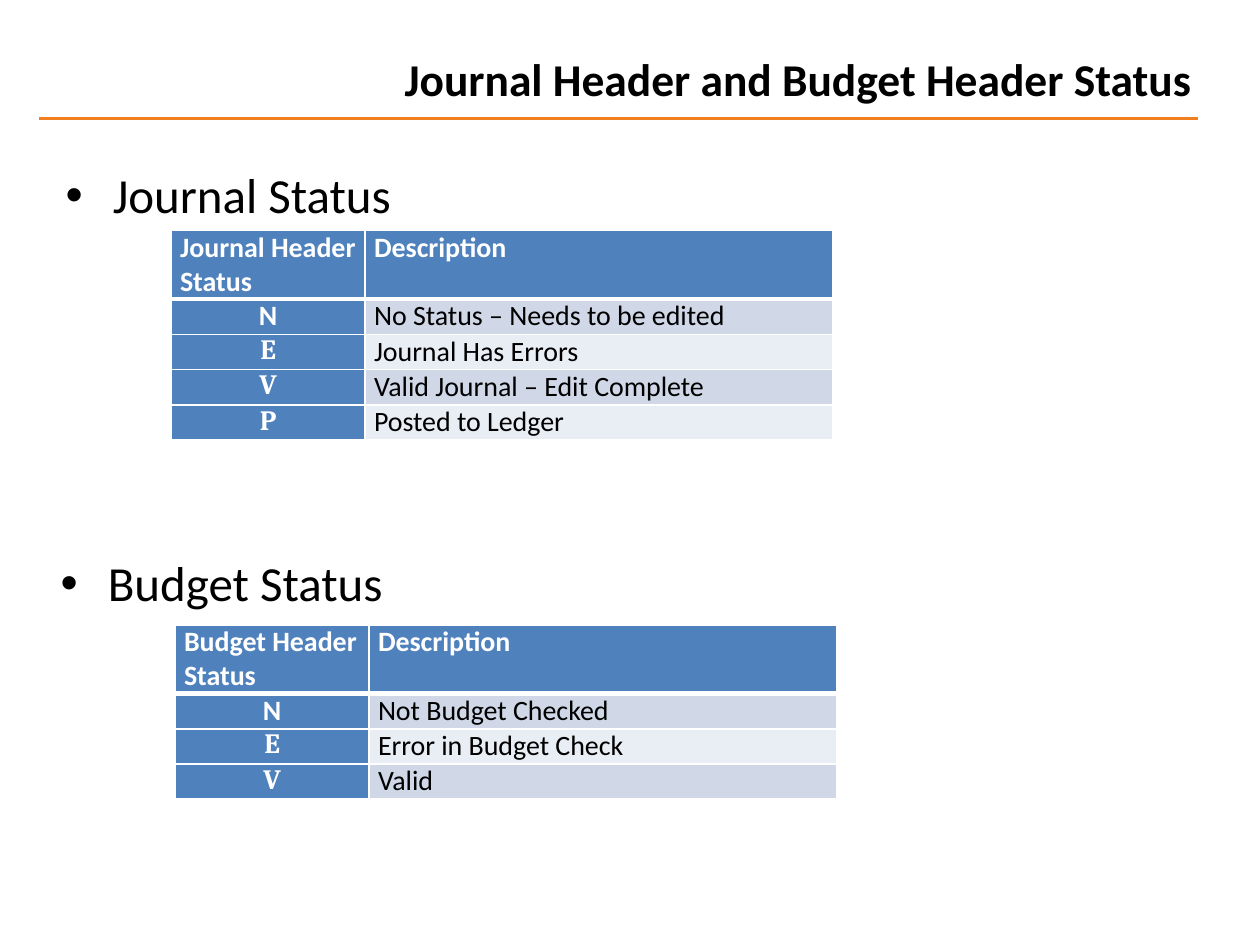
from lxml.etree import SubElement
from pptx import Presentation
from pptx.dml.color import RGBColor
from pptx.enum.shapes import MSO_CONNECTOR as Connector
from pptx.enum.text import MSO_ANCHOR as Anchor, MSO_AUTO_SIZE as AutoSize, PP_ALIGN as Align
from pptx.oxml.ns import qn
from pptx.util import Cm, Pt

BLACK, WHITE, ORANGE = "000000", "FFFFFF", "F17E1F"
BLUE, BANDS = "4F81BD", ("D0D8E8", "E9EDF4")


def color(value):
    return RGBColor.from_string(value)


def write(frame, text, size=16, font="Calibri", ink=BLACK, bold=False,
          align=Align.LEFT, bullet=False):
    """Put one formatted paragraph in a text frame."""
    para = frame.paragraphs[0]
    para.alignment = align
    para.space_before = Pt(0)
    if bullet:
        props = para._p.get_or_add_pPr()
        props.set("marL", str(Cm(0.95)))
        props.set("indent", str(-Cm(0.95)))
        SubElement(props, qn("a:buFont"), typeface="Arial")
        SubElement(props, qn("a:buChar"), char="•")
    span = para.add_run()
    span.text = text
    span.font.name, span.font.size, span.font.bold = font, Pt(size), bold
    span.font.color.rgb = color(ink)


class StatusPage:
    """House style together with the slide being built."""

    columns = (Cm(3.91), Cm(9.42))
    header_height, row_height = Cm(1.37), Cm(0.71)

    def __init__(self, deck):
        self.page = deck.slides.add_slide(deck.slide_layouts[3])

    def placeholder(self, index, text, left, top, width, **style):
        box = self.page.placeholders[index]
        box.left, box.top, box.width, box.height = Cm(left), Cm(top), Cm(width), Cm(1.47)
        frame = box.text_frame
        frame.word_wrap = True
        frame.auto_size = AutoSize.NONE
        frame.vertical_anchor = Anchor.MIDDLE
        write(frame, text, **style)

    def rule(self, left, right, y):
        line = self.page.shapes.add_connector(
            Connector.STRAIGHT, Cm(left), Cm(y), Cm(right), Cm(y))
        line.line.color.rgb = color(ORANGE)
        line.line.width = Pt(2)
        SubElement(line._element.spPr, qn("a:effectLst"))

    def borders(self, cell, top, bottom):
        props = cell._tc.get_or_add_tcPr()
        for side, width in (("L", 1), ("R", 1), ("T", top), ("B", bottom)):
            edge = SubElement(props, qn(f"a:ln{side}"), w=str(Pt(width)))
            fill = SubElement(edge, qn("a:solidFill"))
            SubElement(fill, qn("a:srgbClr"), val=WHITE)

    def cell(self, cell, text, fill, top, bottom, **style):
        cell.margin_left = cell.margin_right = Cm(0.18)
        cell.margin_top = cell.margin_bottom = 0
        self.borders(cell, top, bottom)
        cell.fill.solid()
        cell.fill.fore_color.rgb = color(fill)
        write(cell.text_frame, text, **style)

    def status_table(self, left, top, heading, statuses):
        height = self.header_height + self.row_height * len(statuses)
        table = self.page.shapes.add_table(
            len(statuses) + 1, 2, Cm(left), Cm(top), sum(self.columns), height).table
        table.horz_banding = False
        for column, width in zip(table.columns, self.columns):
            column.width = width

        # Header row
        table.rows[0].height = self.header_height
        for index, text in enumerate((heading, "Description")):
            self.cell(table.cell(0, index), text, BLUE, 1, 3, ink=WHITE, bold=True)

        # One row for each status code
        for row, (code, meaning) in enumerate(statuses, 1):
            table.rows[row].height = self.row_height
            edge = 3 if row == 1 else 1
            self.cell(table.cell(row, 0), code, BLUE, edge, 1, ink=WHITE, bold=True,
                      align=Align.CENTER, font="Calibri" if row == 1 else "Cambria")
            self.cell(table.cell(row, 1), meaning, BANDS[(row - 1) % 2], edge, 1)


def main():
    deck = Presentation()
    deck.slide_width, deck.slide_height = Cm(25.4), Cm(19.05)
    status = StatusPage(deck)

    # Title and rule
    status.rule(0.79, 24.16, 2.39)
    status.placeholder(0, "Journal Header and Budget Header Status", 5.28, 0.84, 19.02,
                       size=26, bold=True, align=Align.RIGHT)

    # Journal status
    status.placeholder(1, "Journal Status", 1.07, 3.18, 23.29, size=28, bullet=True)
    status.status_table(3.45, 4.65, "Journal Header Status", [
        ("N", "No Status – Needs to be edited"),
        ("E", "Journal Has Errors"),
        ("V", "Valid Journal – Edit Complete"),
        ("P", "Posted to Ledger"),
    ])

    # Budget status
    status.placeholder(2, "Budget Status", 0.97, 11, 23.29, size=28, bullet=True)
    status.status_table(3.53, 12.6, "Budget Header Status", [
        ("N", "Not Budget Checked"),
        ("E", "Error in Budget Check"),
        ("V", "Valid"),
    ])

    deck.save("out.pptx")


if __name__ == "__main__":
    main()
